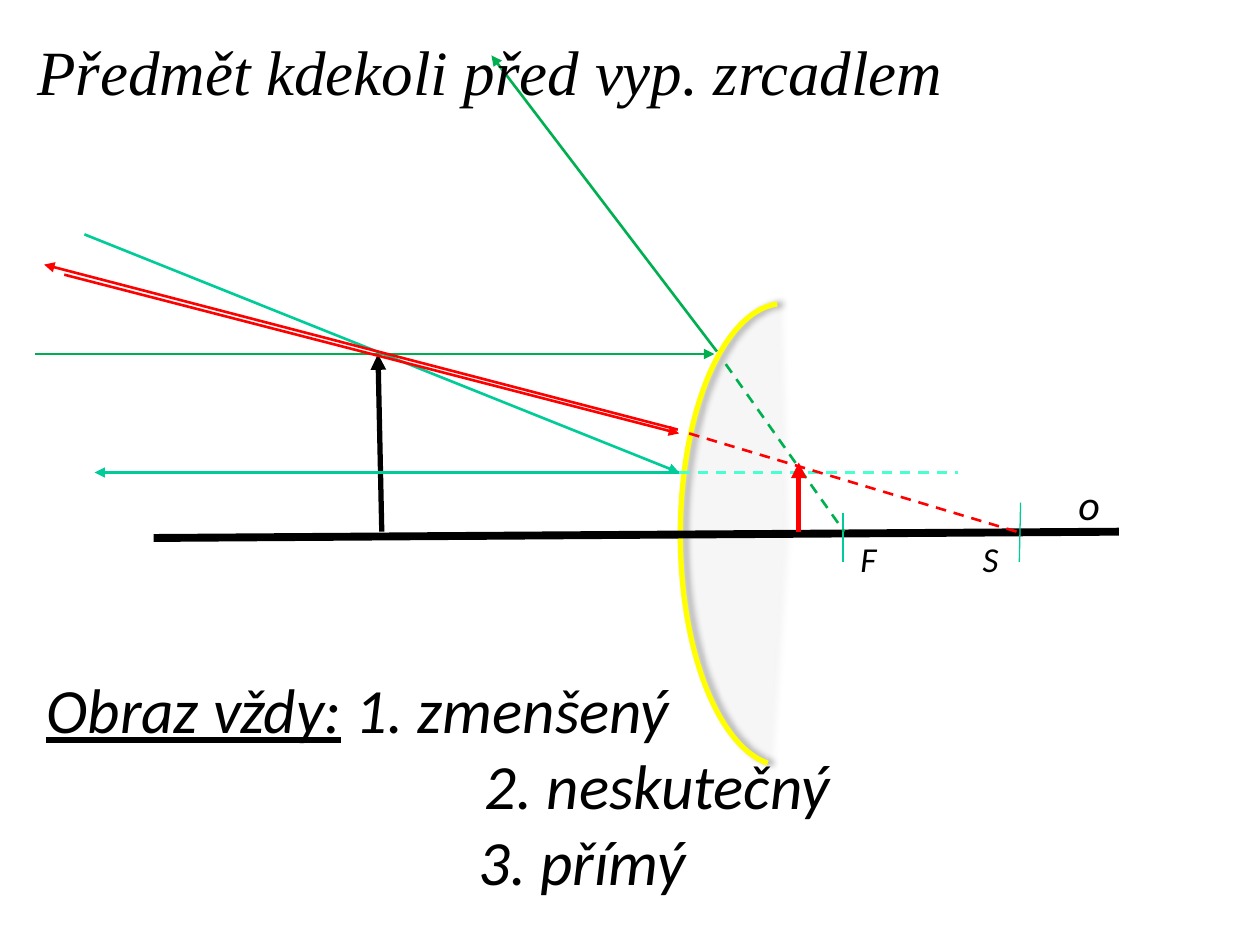
"""Build a slide on how a convex mirror forms the image of an object."""
from pptx import Presentation
from pptx.dml.color import RGBColor
from pptx.enum.dml import MSO_LINE_DASH_STYLE as Dash
from pptx.enum.shapes import MSO_CONNECTOR as Connector, MSO_SHAPE as Shape
from pptx.enum.text import MSO_ANCHOR as Anchor
from pptx.oxml import parse_xml
from pptx.oxml.ns import nsdecls
from pptx.util import Inches, Pt

BLACK = RGBColor(0x00, 0x00, 0x00)
WHITE = RGBColor(0xFF, 0xFF, 0xFF)
YELLOW = RGBColor(0xFF, 0xFF, 0x00)
RED = RGBColor(0xFF, 0x00, 0x00)
GREEN = RGBColor(0x00, 0xB0, 0x50)
TEAL = RGBColor(0x00, 0xCC, 0x99)
AQUA = RGBColor(0x47, 0xFF, 0xD1)

presentation = Presentation()
presentation.slide_width, presentation.slide_height = Inches(10), Inches(7.5)
column = presentation.slide_width / 100
row = presentation.slide_height / 75
slide = presentation.slides.add_slide(presentation.slide_layouts[6])


def add_line(start, end, color, width, arrow=False, dashed=False):
    line = slide.shapes.add_connector(
        Connector.STRAIGHT,
        int(start[0] * column), int(start[1] * row),
        int(end[0] * column), int(end[1] * row),
    )
    line.line.color.rgb = color
    line.line.width = Pt(width)
    if dashed:
        line.line.dash_style = Dash.DASH
    if arrow:
        line.line._get_or_add_ln().append(
            parse_xml(f'<a:tailEnd {nsdecls("a")} type="triangle"/>'))
    line._element.spPr.append(parse_xml(f'<a:effectLst {nsdecls("a")}/>'))


def add_text(left, top, width, height, lines, size, font="Calibri"):
    box = slide.shapes.add_textbox(
        int(left * column), int(top * row), int(width * column), int(height * row))
    frame = box.text_frame
    frame.word_wrap = True
    for index, (indent, text) in enumerate(lines):
        paragraph = frame.paragraphs[0] if index == 0 else frame.add_paragraph()
        paragraph.add_run().text = text
        paragraph.font.name = font
        paragraph.font.size = Pt(size)
        paragraph.font.italic = True
        paragraph.font.color.rgb = BLACK
        paragraph._p.get_or_add_pPr().set("marL", str(int(indent * column)))
    return frame


mirror = slide.shapes.add_shape(
    Shape.ARC, int(54 * column), int(24.1 * row), int(16.4 * column), int(36.7 * row))
for index, degrees in enumerate((94, 268.4)):
    mirror.adjustments[index] = degrees * 0.6
mirror.fill.solid()
mirror.fill.fore_color.rgb = WHITE
mirror.line.color.rgb = YELLOW
mirror.line.width = Pt(3)
fill_color = mirror._element.spPr.find(".//{*}solidFill/{*}srgbClr")
fill_color.append(parse_xml(f'<a:alpha {nsdecls("a")} val="10000"/>'))
mirror._element.spPr.append(parse_xml(
    f'<a:effectLst {nsdecls("a")}>'
    f'<a:outerShdw blurRad="{Pt(4)}" dist="{Pt(3)}" dir="0" rotWithShape="0">'
    '<a:srgbClr val="000000"><a:alpha val="40000"/></a:srgbClr>'
    '</a:outerShdw></a:effectLst>'))

add_line((12.2, 42.7), (88.8, 42.2), BLACK, 4.5)
add_line((66.9, 40.7), (66.9, 44.6), TEAL, 0.75)
add_line((81, 39.9), (80.9, 44.6), TEAL, 0.75)

add_text(84.6, 37.5, 3.9, 5, [(0, "o")], 24)
add_text(67.3, 42.2, 7.9, 4.4, [(0, "F")], 20)
add_text(77, 42.2, 5.5, 4.4, [(0, "S")], 20)

add_line((2.8, 28.1), (56.7, 28.1), GREEN, 1.5, arrow=True)
add_line((56.9, 27.9), (39, 4.4), GREEN, 1.5, arrow=True)
add_line((57.6, 28.9), (67, 42.2), GREEN, 1.5, dashed=True)

add_text(2, 2.1, 95.3, 7, [(0, "Předmět kdekoli před vyp. zrcadlem")], 36, "Times New Roman")

add_line((30.3, 42.2), (30, 28.1), BLACK, 3, arrow=True)
add_line((6.7, 18.6), (53.9, 37.5), TEAL, 1.5, arrow=True)
add_line((5.1, 21.8), (53.9, 34.4), RED, 1.5, arrow=True)
add_line((53.9, 37.5), (76, 37.5), AQUA, 1.5, dashed=True)
add_line((54.7, 34.4), (80.7, 42.2), RED, 1.5, dashed=True)
add_line((53.8, 34.1), (3.5, 21), RED, 1.5, arrow=True)
add_line((53.9, 37.5), (7.5, 37.5), TEAL, 1.5, arrow=True)
add_line((63.4, 42.2), (63.4, 36.7), RED, 3, arrow=True)

summary = add_text(
    2.7, 53.2, 89.8, 18.1,
    [(0, "Obraz vždy:"), (34.8, "2. neskutečný"), (34.3, "3. přímý")], 36)
summary.vertical_anchor = Anchor.MIDDLE
heading = summary.paragraphs[0]
heading.runs[0].font.underline = True
heading.add_run().text = " 1. zmenšený"

presentation.save("out.pptx")
